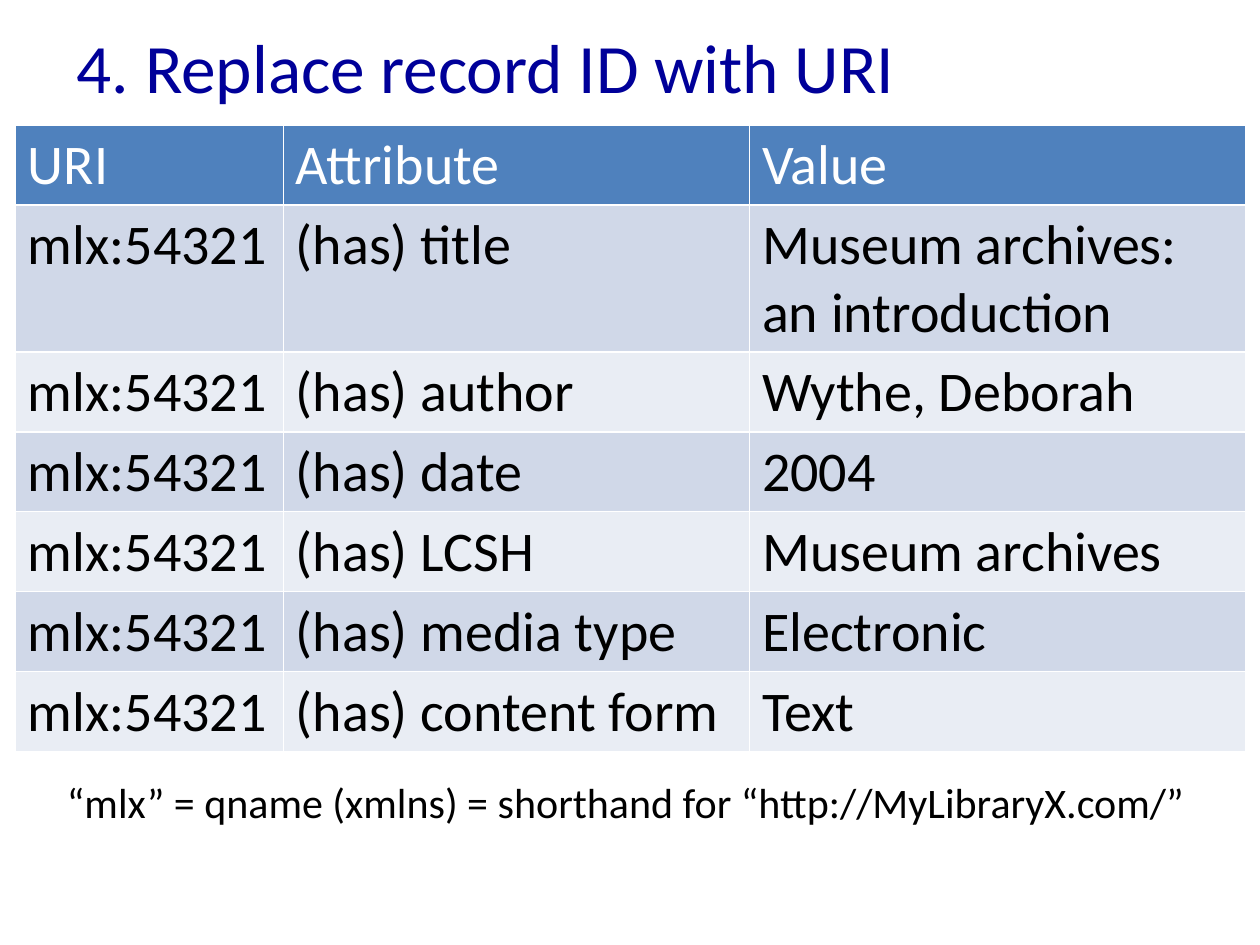
"""Build a slide with a table of URI, attribute and value statements."""
from pptx import Presentation
from pptx.dml.color import RGBColor
from pptx.enum.text import MSO_ANCHOR
from pptx.util import Cm, Pt

COLORS = {
    "title": "000099",
    "header": "4F81BD",
    "header_text": "FFFFFF",
    "odd_row": "D0D8E8",
    "even_row": "E9EDF4",
    "text": "000000",
}
FONT = "Calibri"

TITLE = "4. Replace record ID with URI"
HEADER = ("URI", "Attribute", "Value")
RECORD_URI = "mlx:54321"
STATEMENTS = [
    ("(has) title", "Museum archives: an introduction"),
    ("(has) author", "Wythe, Deborah"),
    ("(has) date", "2004"),
    ("(has) LCSH", "Museum archives"),
    ("(has) media type", "Electronic"),
    ("(has) content form", "Text"),
]
FOOTNOTE = "“mlx” = qname (xmlns) = shorthand for “http://MyLibraryX.com/”"
COLUMN_WIDTHS = (5.4, 9.4, 10)
ROW_HEIGHT = 1.04


def write(frame, text, size, color):
    paragraph = frame.paragraphs[0]
    paragraph.text = text
    paragraph.font.name = FONT
    paragraph.font.size = Pt(size)
    paragraph.font.bold = False
    paragraph.font.color.rgb = RGBColor.from_string(COLORS[color])


def add_text(slide, text, place, size, color, anchor, wrap):
    frame = slide.shapes.add_textbox(*map(Cm, place)).text_frame
    frame.word_wrap = wrap
    frame.vertical_anchor = anchor
    write(frame, text, size, color)


def add_statements(slide):
    rows = [HEADER] + [(RECORD_URI, *statement) for statement in STATEMENTS]
    table = slide.shapes.add_table(
        len(rows), len(HEADER), Cm(0.31), Cm(2.52),
        Cm(sum(COLUMN_WIDTHS)), Cm(ROW_HEIGHT * len(rows)),
    ).table
    for column, width in zip(table.columns, COLUMN_WIDTHS):
        column.width = Cm(width)
    for r, row in enumerate(rows):
        fill = "header" if r == 0 else "odd_row" if r % 2 else "even_row"
        for c, text in enumerate(row):
            cell = table.cell(r, c)
            cell.fill.solid()
            cell.fill.fore_color.rgb = RGBColor.from_string(COLORS[fill])
            write(cell.text_frame, text, 32, "text" if r else "header_text")


def main():
    deck = Presentation()
    deck.slide_width, deck.slide_height = Cm(25.4), Cm(19.05)
    slide = deck.slides.add_slide(deck.slide_layouts[6])
    add_text(slide, TITLE, (1.3, 0.33, 22.86, 2), 39.6, "title", MSO_ANCHOR.MIDDLE, True)
    add_statements(slide)
    add_text(slide, FOOTNOTE, (1.1, 15.52, 23.44, 1.28), 24, "text", MSO_ANCHOR.TOP, False)
    deck.save("out.pptx")


if __name__ == "__main__":
    main()
